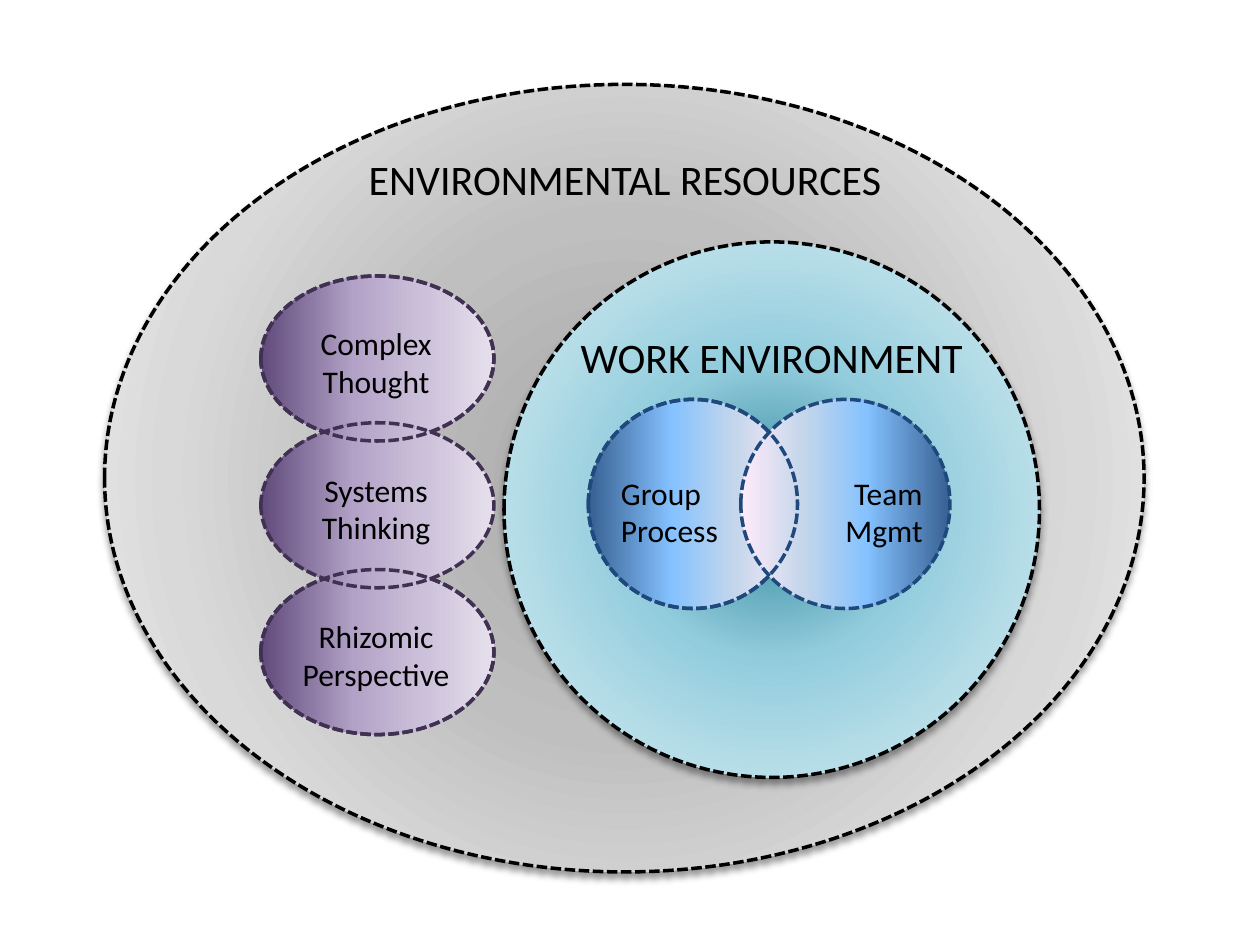
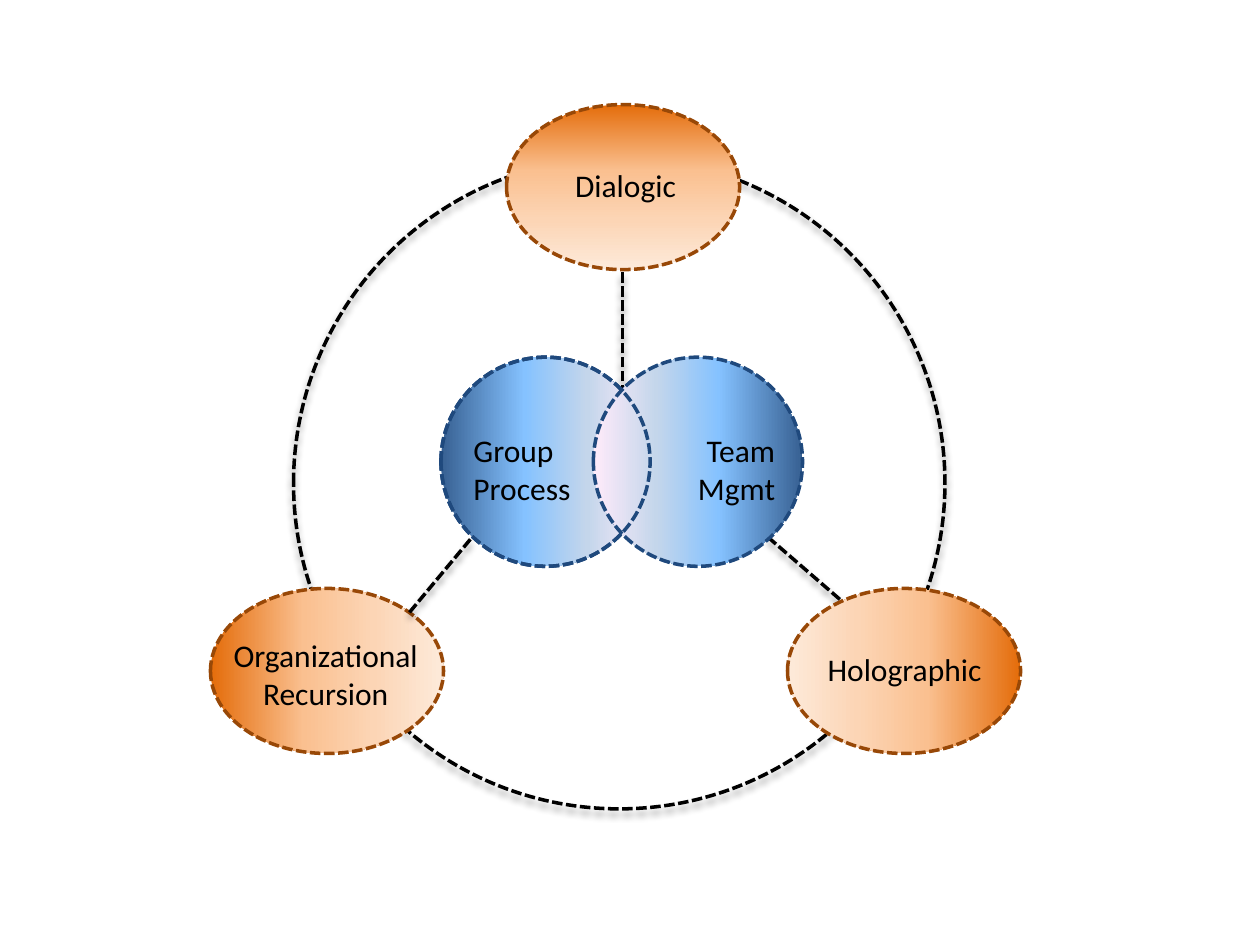
from dataclasses import dataclass
from typing import Optional

from lxml.etree import SubElement as Sub
from pptx import Presentation
from pptx.dml.color import RGBColor
from pptx.enum.dml import MSO_LINE
from pptx.enum.shapes import MSO_CONNECTOR as Link, MSO_SHAPE as Kind
from pptx.enum.text import MSO_AUTO_SIZE as Fit, PP_ALIGN as Align
from pptx.oxml.ns import qn
from pptx.util import Inches, Pt

FONT = "Calibri"
BLACK = RGBColor(0x00, 0x00, 0x00)
NAVY = RGBColor(0x1F, 0x49, 0x7D)
PLUM = RGBColor(0x40, 0x31, 0x52)
BROWN = RGBColor(0x98, 0x48, 0x07)


def tones(*codes: str) -> tuple[RGBColor, ...]:
    return tuple(RGBColor.from_string(code) for code in codes)


# Gradient colours, each set laid on the same stops
STOPS = (0, 40, 70, 100)
GRAY = tones("A6A6A6", "BFBFBF", "D9D9D9", "F2F2F2")
TEAL = tones("31859C", "93CDDD", "B7DEE8", "DBEEF4")
BLUE = tones("376092", "85C2FF", "C4D6EB", "FFEBFA")
MAUVE = tones("604A7B", "B3A2C7", "CCC1DA", "E6E0EC")
AMBER = tones("E46C0A", "FAC090", "FCD5B5", "FDEADA")

DISC = 1.66               # size of the two blue discs
OVAL_W, OVAL_H = 1.85, 1.31


@dataclass
class Oval:
    left: float
    top: float
    width: float
    height: float
    edge: RGBColor = BLACK
    fill: Optional[tuple[RGBColor, ...]] = None
    angle: Optional[int] = None      # no angle: shade from the centre
    shade: bool = False


@dataclass
class Label:
    text: str
    left: float
    top: float
    width: float
    height: float = 0.71
    align: Align = Align.CENTER
    size: int = 18


@dataclass
class Spoke:
    x1: float
    y1: float
    x2: float
    y2: float


def set_grad(shape, colours: tuple[RGBColor, ...], angle: Optional[int]) -> None:
    shape.fill.gradient()
    grad = shape.element.spPr.find(qn("a:gradFill"))
    for child in list(grad):
        grad.remove(child)
    stops = Sub(grad, qn("a:gsLst"))
    for place, colour in zip(STOPS, colours):
        stop = Sub(stops, qn("a:gs"), pos=str(place * 1000))
        Sub(stop, qn("a:srgbClr"), val=str(colour))
    if angle is None:
        path = Sub(grad, qn("a:path"), path="circle")
        Sub(path, qn("a:fillToRect"), l="50000", t="50000", r="50000", b="50000")
    else:
        Sub(grad, qn("a:lin"), ang=str(angle * 60000), scaled="0")


def set_line(line, colour: RGBColor) -> None:
    line.color.rgb = colour
    line.width = Pt(2)
    line.dash_style = MSO_LINE.SQUARE_DOT


def set_shade(shape, shade: bool) -> None:
    effects = Sub(shape.element.spPr, qn("a:effectLst"))
    if shade:
        drop = Sub(effects, qn("a:outerShdw"), blurRad=str(Pt(4)), dist=str(Pt(3)),
                   dir=str(90 * 60000), rotWithShape="0")
        tint = Sub(drop, qn("a:srgbClr"), val=str(BLACK))
        Sub(tint, qn("a:alpha"), val="40000")


def draw_oval(slide, oval: Oval) -> None:
    shape = slide.shapes.add_shape(Kind.OVAL, Inches(oval.left), Inches(oval.top),
                                   Inches(oval.width), Inches(oval.height))
    if oval.fill:
        set_grad(shape, oval.fill, oval.angle)
    else:
        shape.fill.background()
    set_line(shape.line, oval.edge)
    set_shade(shape, oval.shade)


def draw_label(slide, label: Label) -> None:
    box = slide.shapes.add_textbox(Inches(label.left), Inches(label.top),
                                   Inches(label.width), Inches(label.height))
    frame = box.text_frame
    frame.word_wrap = True
    frame.auto_size = Fit.SHAPE_TO_FIT_TEXT
    frame.text = label.text
    for para in frame.paragraphs:
        para.alignment = label.align
        for run in para.runs:
            run.font.name = FONT
            run.font.size = Pt(label.size)
            run.font.color.rgb = BLACK


def draw_spoke(slide, spoke: Spoke) -> None:
    line = slide.shapes.add_connector(Link.STRAIGHT, Inches(spoke.x1), Inches(spoke.y1),
                                      Inches(spoke.x2), Inches(spoke.y2))
    set_line(line.line, BLACK)
    set_shade(line, True)


def draw_pair(slide, left: float, top: float) -> None:
    """Two crossing discs, with the left outline repeated on top."""
    draw_oval(slide, Oval(left, top, DISC, DISC, NAVY, BLUE, 0))
    draw_oval(slide, Oval(left + 1.21, top, DISC, DISC, NAVY, BLUE, 180))
    draw_oval(slide, Oval(left, top, DISC, DISC, NAVY))
    draw_label(slide, Label("Group\nProcess", left + 0.16, top + 0.54, 1, align=Align.LEFT))
    draw_label(slide, Label("Team\nMgmt", left + 1.83, top + 0.54, 0.92, align=Align.RIGHT))


def draw_nested(slide) -> None:
    # Outer and inner settings
    draw_oval(slide, Oval(0.83, 0.67, 8.25, 6.25, fill=GRAY, shade=True))
    draw_oval(slide, Oval(4, 1.92, 4.25, 4.25, fill=TEAL, shade=True))
    draw_pair(slide, 4.67, 3.17)
    draw_label(slide, Label("WORK ENVIRONMENT", 4, 2.58, 4.25, 0.5, size=24))
    draw_label(slide, Label("ENVIRONMENTAL RESOURCES", 1.92, 1.17, 6.08, 0.5, size=24))

    # Column of views: the middle one lies over its neighbours
    views = ("Complex\nThought", "Systems\nThinking", "Rhizomic\nPerspective")
    left, first, step = 2.07, 2.19, 1.165
    for i in (2, 0, 1):
        top = first + i * step
        draw_oval(slide, Oval(left, top, OVAL_W, OVAL_H, PLUM, MAUVE, 0))
        draw_label(slide, Label(views[i], left + 0.08, top + 0.33, 1.67))
    for i in (2, 0):
        draw_oval(slide, Oval(left, first + i * step, OVAL_W, OVAL_H, PLUM))


def draw_ring(slide) -> None:
    # Spokes and ring behind the discs
    draw_spoke(slide, Spoke(4.94, 3.25, 4.94, 2.15))
    draw_spoke(slide, Spoke(6.75, 4.83, 6.08, 4.25))
    draw_oval(slide, Oval(2.33, 1.25, 5.17, 5.17, shade=True))
    draw_pair(slide, 3.5, 2.835)

    # Three nodes on the ring, dark side facing out
    nodes = (
        (1.67, 4.67, 0, Label("Organizational\nRecursion", 1.75, 5, 1.67)),
        (4.02, 0.83, 90, Label("Dialogic", 4.38, 1.27, 1.17, 0.4)),
        (6.25, 4.67, 180, Label("Holographic", 6.47, 5.11, 1.46, 0.4, Align.LEFT)),
    )
    for left, top, angle, label in nodes:
        draw_oval(slide, Oval(left, top, OVAL_W, OVAL_H, BROWN, AMBER, angle))
        draw_label(slide, label)
    draw_spoke(slide, Spoke(3.25, 4.86, 3.75, 4.26))


def main() -> None:
    deck = Presentation()
    deck.slide_width, deck.slide_height = Inches(10), Inches(7.5)
    for draw in (draw_nested, draw_ring):
        draw(deck.slides.add_slide(deck.slide_layouts[6]))
    deck.save("out.pptx")


if __name__ == "__main__":
    main()
